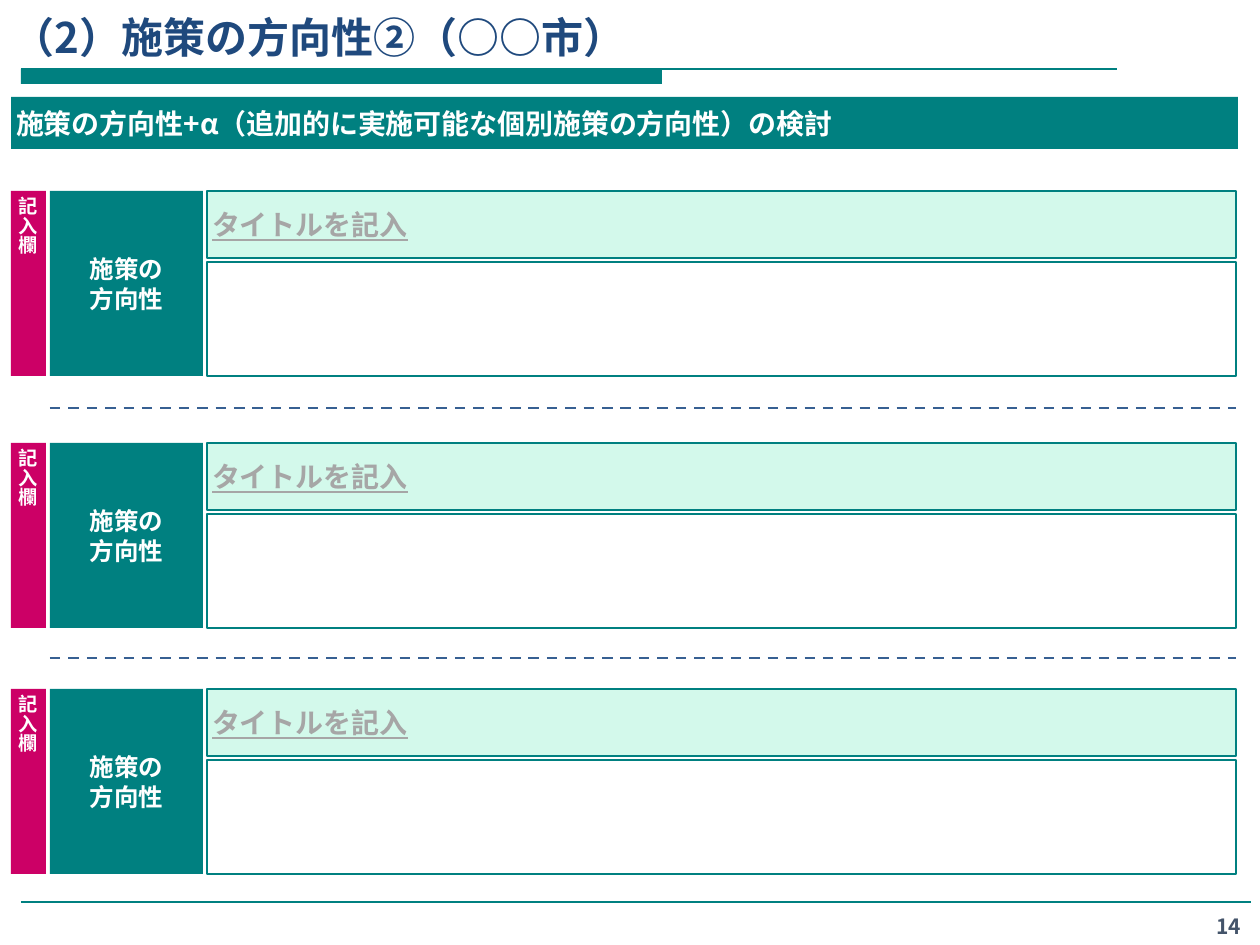
import pptx
import pptx.dml.color
import pptx.enum.dml
import pptx.enum.shapes
import pptx.enum.text
import pptx.oxml.ns
import pptx.util
from lxml import etree

PX = 914400 / 126
FONT = "Noto Sans CJK JP"
COLORS = {
    "teal": "008080",
    "mint": "D3F9EB",
    "magenta": "CC0066",
    "navy": "1F497D",
    "blue": "376092",
    "slate": "44546A",
    "gray": "A6A6A6",
    "white": "FFFFFF",
}
ALIGN = pptx.enum.text.PP_ALIGN
ANCHOR = pptx.enum.text.MSO_ANCHOR


def px(length):
    return pptx.util.Emu(round(length * PX))


def rgb(name):
    return pptx.dml.color.RGBColor.from_string(COLORS[name])


def write_text(shape, text, size, color, align=ALIGN.LEFT, underline=None):
    text_frame = shape.text_frame
    text_frame.text = text
    for paragraph in text_frame.paragraphs:
        paragraph.alignment = align
        for run in paragraph.runs:
            font = run.font
            font.name = FONT
            font.size = pptx.util.Pt(size)
            font.bold = True
            font.underline = underline
            font.color.rgb = rgb(color)
            east_asian = etree.SubElement(font._element, pptx.oxml.ns.qn("a:ea"))
            east_asian.set("typeface", FONT)


def add_box(slide, left, top, width, height, fill, line=None):
    shape = slide.shapes.add_shape(
        pptx.enum.shapes.MSO_SHAPE.RECTANGLE, px(left), px(top), px(width), px(height)
    )
    shape.shadow.inherit = False
    shape.fill.solid()
    shape.fill.fore_color.rgb = rgb(fill)
    if line:
        shape.line.color.rgb = rgb(line)
        shape.line.width = pptx.util.Pt(1)
    else:
        shape.line.fill.background()
    text_frame = shape.text_frame
    text_frame.margin_left = text_frame.margin_right = px(5)
    text_frame.margin_top = text_frame.margin_bottom = px(6)
    text_frame.vertical_anchor = ANCHOR.MIDDLE
    text_frame.word_wrap = False
    return shape


def add_rule(slide, left, top, width, color, weight, dashed=False):
    connector = slide.shapes.add_connector(
        pptx.enum.shapes.MSO_CONNECTOR.STRAIGHT, px(left), px(top), px(left + width), px(top)
    )
    connector.line.color.rgb = rgb(color)
    connector.line.width = pptx.util.Pt(weight)
    if dashed:
        connector.line.dash_style = pptx.enum.dml.MSO_LINE.DASH
    etree.SubElement(connector._element.spPr, pptx.oxml.ns.qn("a:effectLst"))


def add_text_box(slide, left, top, width, height, text, size, color, align, anchor):
    text_box = slide.shapes.add_textbox(px(left), px(top), px(width), px(height))
    text_box.text_frame.word_wrap = True
    text_box.text_frame.vertical_anchor = anchor
    write_text(text_box, text, size, color, align)


def add_heading(slide, left, top, width):
    add_text_box(slide, left, top, width, 68, "（2）施策の方向性②（○○市）",
                 24, "navy", ALIGN.LEFT, ANCHOR.BOTTOM)
    add_box(slide, left + 21, top + 69, 641, 15, "teal")
    add_rule(slide, left + 21, top + 69, 1096, "teal", 0.75)


def add_banner(slide, left, top, width, height):
    banner = add_box(slide, left, top, width, height, "teal")
    write_text(banner, "施策の方向性+α（追加的に実施可能な個別施策の方向性）の検討", 16, "white")


def add_policy_entry(slide, left, top, width, height):
    tag = add_box(slide, left, top, 35, height, "magenta")
    tag.text_frame.vertical_anchor = ANCHOR.BOTTOM
    tag.text_frame._txBody.bodyPr.set("vert", "eaVert")
    write_text(tag, "記入欄", 11, "white", ALIGN.CENTER)

    label = add_box(slide, left + 39, top, 153, height, "teal")
    write_text(label, "施策の\n方向性", 14, "white", ALIGN.CENTER)

    field_left, field_width = left + 196, width - 196
    title = add_box(slide, field_left, top, field_width, 67, "mint", "teal")
    write_text(title, "タイトルを記入", 16, "gray", underline=True)
    add_box(slide, field_left, top + 71, field_width, height - 71, "white", "teal")


def add_footer(slide, left, top, width):
    add_rule(slide, left, top, width, "teal", 0.75)
    add_text_box(slide, left + width - 49, top + 5, 54, 35, "14",
                 12, "slate", ALIGN.CENTER, ANCHOR.TOP)


def main():
    presentation = pptx.Presentation()
    presentation.slide_width = px(1260)
    presentation.slide_height = px(945)
    slide = presentation.slides.add_slide(presentation.slide_layouts[6])

    add_heading(slide, 0, 0, 1260)
    add_banner(slide, 11, 97, 1227, 52)
    for top in (191, 443, 689):
        add_policy_entry(slide, 11, top, 1225, 185)
    for top in (408, 658):
        add_rule(slide, 50, top, 1186, "blue", 1.5, dashed=True)
    add_footer(slide, 21, 902, 1230)

    presentation.save("out.pptx")


if __name__ == "__main__":
    main()
